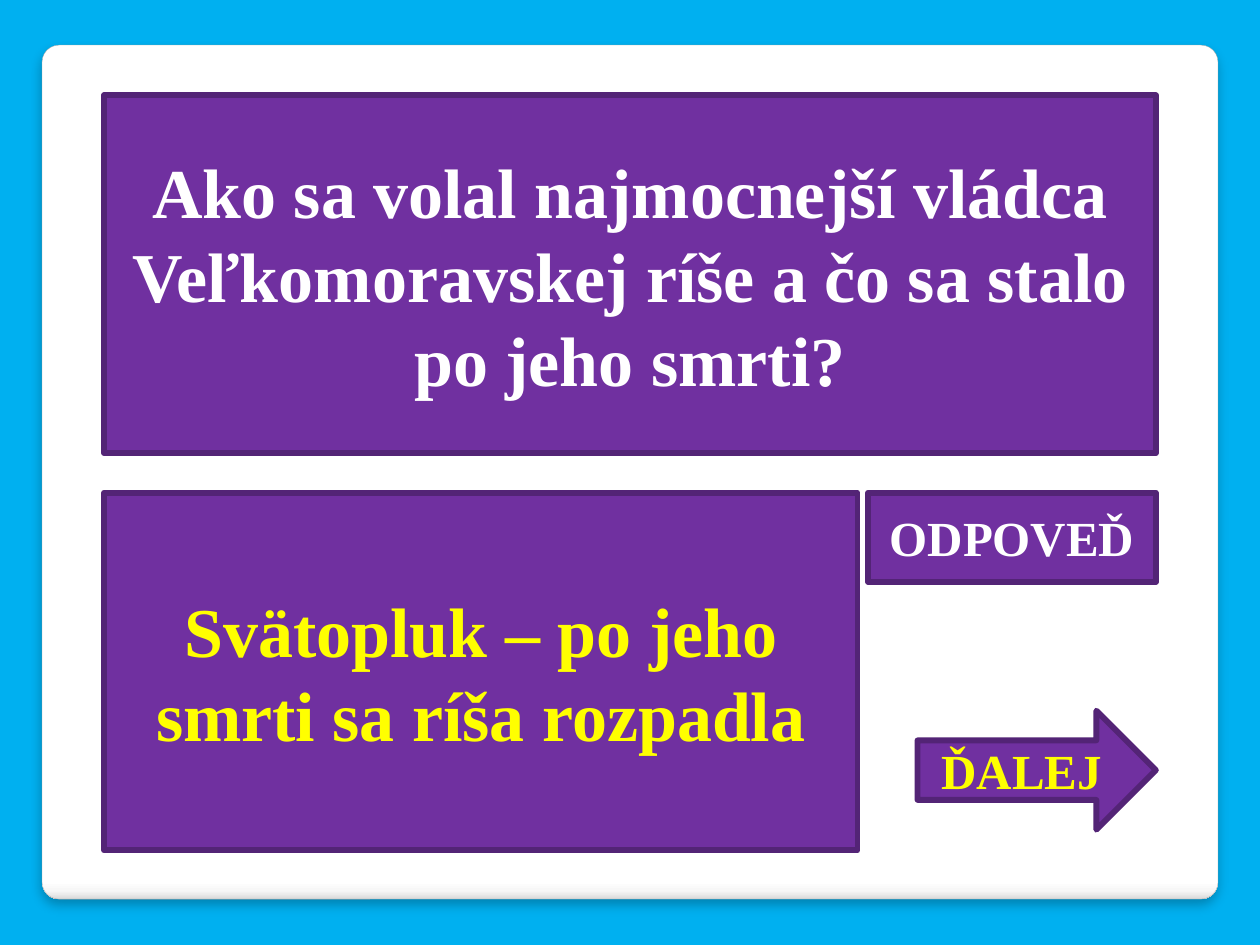
from lxml.etree import SubElement
from pptx import Presentation
from pptx.dml.color import RGBColor
from pptx.enum.shapes import MSO_SHAPE
from pptx.enum.text import MSO_ANCHOR, PP_ALIGN
from pptx.oxml.ns import qn
from pptx.util import Pt

SKY = RGBColor(0x00, 0xB0, 0xF0)
WHITE = RGBColor(0xFF, 0xFF, 0xFF)
PALE = RGBColor(0xF7, 0xF7, 0xF7)
SILVER = RGBColor(0xDA, 0xDA, 0xDA)
GREY = RGBColor(0xA4, 0xA4, 0xA4)
BLACK = RGBColor(0x00, 0x00, 0x00)
PURPLE = RGBColor(0x70, 0x30, 0xA0)
DARK_PURPLE = RGBColor(0x53, 0x24, 0x76)
YELLOW = RGBColor(0xFF, 0xFF, 0x00)
FONT = "Times New Roman"


def add_box(page, kind, left, top, width, height):
    box = page.shapes.add_shape(kind, Pt(left), Pt(top), Pt(width), Pt(height))
    box.shadow.inherit = False
    return box


def add_card(page, left, top, width, height):
    """White rounded card with a shaded lower edge and a soft shadow."""
    card = add_box(page, MSO_SHAPE.ROUNDED_RECTANGLE, left, top, width, height)
    card.adjustments[0] = 0.02
    card.line.color.rgb = GREY
    card.line.width = Pt(0.16)

    # Four-stop vertical gradient
    card.fill.gradient()
    card.fill.gradient_angle = 270
    properties = card._element.spPr
    stops = properties.find(".//" + qn("a:gsLst"))
    for stop in list(stops):
        stops.remove(stop)
    for percent, color in ((0, WHITE), (98, WHITE), (99, PALE), (100, SILVER)):
        stop = SubElement(stops, qn("a:gs"), pos=str(percent * 1000))
        SubElement(stop, qn("a:srgbClr"), val=str(color))

    # Shadow falling straight down
    effects = properties.find(qn("a:effectLst"))
    shadow = SubElement(effects, qn("a:outerShdw"), blurRad=str(Pt(6)),
                        dist=str(Pt(4)), dir="5400000", rotWithShape="0")
    shade = SubElement(shadow, qn("a:srgbClr"), val=str(BLACK))
    SubElement(shade, qn("a:alpha"), val="25000")


def add_panel(page, kind, left, top, width, height, text, size, color):
    """Purple shape with bold centred text."""
    panel = add_box(page, kind, left, top, width, height)
    panel.fill.solid()
    panel.fill.fore_color.rgb = PURPLE
    panel.line.color.rgb = DARK_PURPLE
    panel.line.width = Pt(3.35)
    frame = panel.text_frame
    frame.word_wrap = True
    frame.vertical_anchor = MSO_ANCHOR.MIDDLE
    frame.text = text
    para = frame.paragraphs[0]
    para.alignment = PP_ALIGN.CENTER
    font = para.runs[0].font
    font.name = FONT
    font.size = Pt(size)
    font.bold = True
    font.color.rgb = color


def add_quiz(page, left, top, width, height):
    """Question above; answer, answer label and next arrow below."""
    rectangle, arrow = MSO_SHAPE.RECTANGLE, MSO_SHAPE.RIGHT_ARROW
    right = left + width
    panel_height = 204.5
    answer_top = top + height - panel_height
    label_width, arrow_width = 164.4, 136.2

    add_panel(page, rectangle, left, top, width, panel_height,
              "Ako sa volal najmocnejší vládca Veľkomoravskej ríše "
              "a čo sa stalo po jeho smrti?", 40, WHITE)
    add_panel(page, rectangle, left, answer_top, 430.5, panel_height,
              "Svätopluk – po jeho smrti sa ríša rozpadla", 40, YELLOW)
    add_panel(page, rectangle, right - label_width, answer_top,
              label_width, 51.1, "ODPOVEĎ", 28, WHITE)
    add_panel(page, arrow, right - arrow_width, answer_top + 124.6,
              arrow_width, 68, "ĎALEJ", 28, YELLOW)


def main():
    deck = Presentation()
    deck.slide_width, deck.slide_height = Pt(720), Pt(540)
    page = deck.slides.add_slide(deck.slide_layouts[6])
    page.background.fill.solid()
    page.background.fill.fore_color.rgb = SKY
    add_card(page, 24, 25.8, 672, 488)
    add_quiz(page, 59.5, 54.5, 601, 431.5)
    deck.save("out.pptx")


if __name__ == "__main__":
    main()
